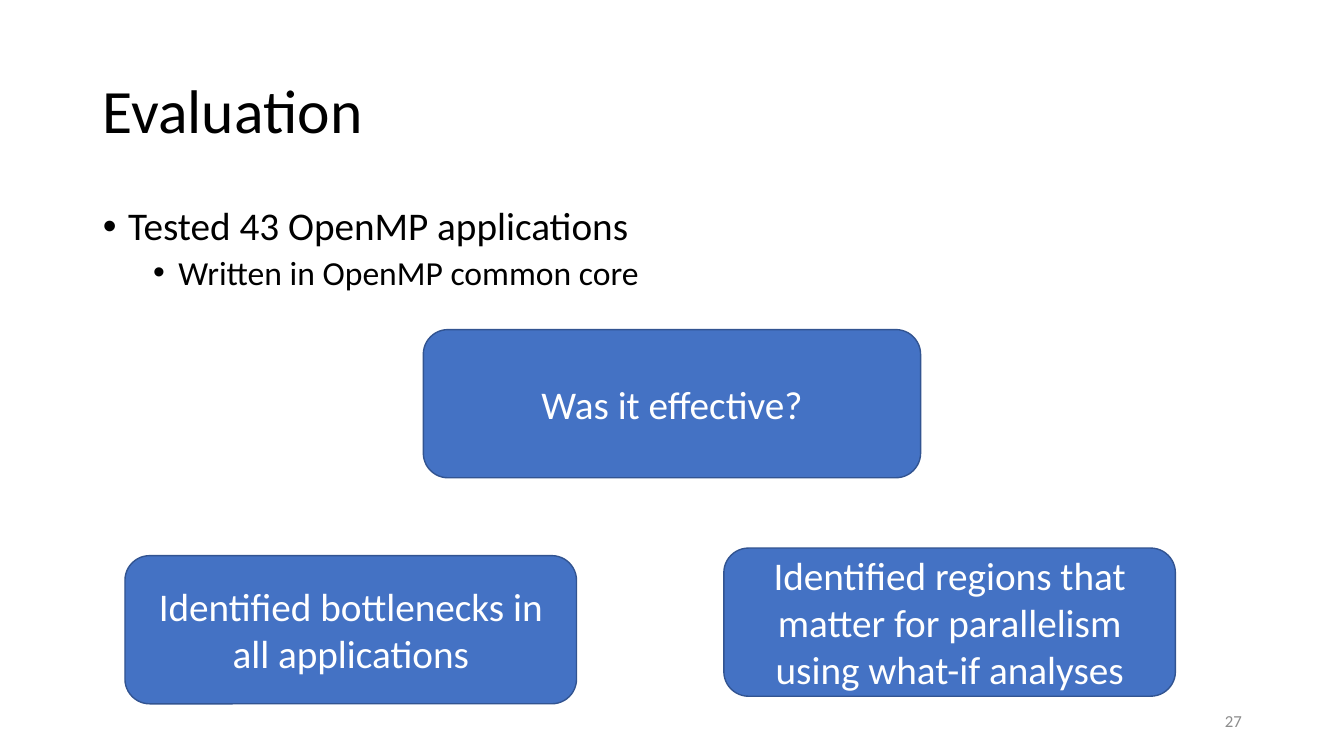
"""Build the Evaluation slide with its question and two findings."""
from dataclasses import dataclass

import lxml.etree
import pptx
import pptx.dml.color
import pptx.enum.shapes
import pptx.enum.text
import pptx.oxml.ns
import pptx.util

WIDTH, HEIGHT = 13.33, 7.5
FONT = "Calibri"
ANCHOR = pptx.enum.text.MSO_ANCHOR
ALIGN = pptx.enum.text.PP_ALIGN


@dataclass(frozen=True)
class Area:
    """Position and size as percentages of the slide."""
    left: float
    top: float
    width: float
    height: float

    def emu(self) -> list[int]:
        """Return left, top, width and height in EMU."""
        return [pptx.util.Inches(share * side / 100) for share, side in (
            (self.left, WIDTH), (self.top, HEIGHT),
            (self.width, WIDTH), (self.height, HEIGHT))]


@dataclass(frozen=True)
class Box:
    """A rounded box with centred text."""
    text: str
    area: Area


@dataclass(frozen=True)
class Bullet:
    """A list entry with its level, size, space before and indent."""
    text: str
    level: int
    size: int
    before: int
    indent: float


BOXES = [
    Box("Was it effective?", Area(31.5, 43.6, 37, 19.6)),
    Box("Identified bottlenecks in all applications", Area(9.3, 73.5, 33.6, 19.6)),
    Box("Identified regions that matter for parallelism using what-if analyses",
        Area(53.86, 72.5, 33.6, 19.6)),
]
BULLETS = [
    Bullet("Tested 43 OpenMP applications", 0, 28, 10, 0.25),
    Bullet("Written in OpenMP common core", 1, 24, 5, 0.75),
]


def rgb(value: str) -> pptx.dml.color.RGBColor:
    """Turn a hex string into a colour."""
    return pptx.dml.color.RGBColor.from_string(value)


def place(sp, area: Area) -> None:
    """Move and size a shape."""
    sp.left, sp.top, sp.width, sp.height = area.emu()


def style(p, size: int, color: str, align=ALIGN.LEFT) -> None:
    """Format a paragraph and its runs."""
    p.alignment = align
    for r in p.runs:
        r.font.name, r.font.size = FONT, pptx.util.Pt(size)
        r.font.color.rgb = rgb(color)


def add_title(s, text: str, area: Area) -> None:
    """Fill the title placeholder."""
    sp = s.shapes.title
    place(sp, area)
    tf = sp.text_frame
    tf.text = text
    tf.vertical_anchor = ANCHOR.MIDDLE
    tf.paragraphs[0].line_spacing = 0.9
    style(tf.paragraphs[0], 44, "000000")


def add_bullets(s, bullets: list[Bullet], area: Area) -> None:
    """Fill the body placeholder with a bulleted list."""
    sp = s.placeholders[1]
    place(sp, area)
    tf = sp.text_frame
    tf.text = "\n".join(b.text for b in bullets)
    for p, b in zip(tf.paragraphs, bullets):
        p.level, p.line_spacing = b.level, 0.9
        p.space_before = pptx.util.Pt(b.before)
        style(p, b.size, "000000")
        pPr = p._p.get_or_add_pPr()
        pPr.set("marL", str(pptx.util.Inches(b.indent)))
        pPr.set("indent", str(pptx.util.Inches(-0.25)))
        qn = pptx.oxml.ns.qn
        lxml.etree.SubElement(pPr, qn("a:buFont"), typeface="Arial")
        lxml.etree.SubElement(pPr, qn("a:buChar"), char="•")


def add_box(s, box: Box) -> None:
    """Draw a rounded box."""
    sp = s.shapes.add_shape(
        pptx.enum.shapes.MSO_SHAPE.ROUNDED_RECTANGLE, *box.area.emu())
    sp.shadow.inherit = False
    sp.fill.solid()
    sp.fill.fore_color.rgb = rgb("4472C4")
    sp.line.color.rgb = rgb("325491")
    sp.line.width = pptx.util.Pt(1)
    tf = sp.text_frame
    tf.text, tf.word_wrap = box.text, True
    tf.vertical_anchor = ANCHOR.MIDDLE
    style(tf.paragraphs[0], 28, "FFFFFF", ALIGN.CENTER)


def add_number(s, text: str, area: Area) -> None:
    """Write the page number."""
    tf = s.shapes.add_textbox(*area.emu()).text_frame
    tf.text, tf.word_wrap = text, True
    tf.vertical_anchor = ANCHOR.MIDDLE
    style(tf.paragraphs[0], 12, "8C8C8C", ALIGN.RIGHT)


def main() -> None:
    """Build and save the slide."""
    prs = pptx.Presentation()
    prs.slide_width = pptx.util.Inches(WIDTH)
    prs.slide_height = pptx.util.Inches(HEIGHT)
    s = prs.slides.add_slide(prs.slide_layouts[1])
    add_title(s, "Evaluation", Area(6.9, 5.33, 86.25, 19.33))
    add_bullets(s, BULLETS, Area(6.9, 26.67, 86.25, 63.47))
    add_number(s, "27", Area(70.65, 92.67, 22.5, 5.33))
    for box in BOXES:
        add_box(s, box)
    prs.save("out.pptx")


if __name__ == "__main__":
    main()
